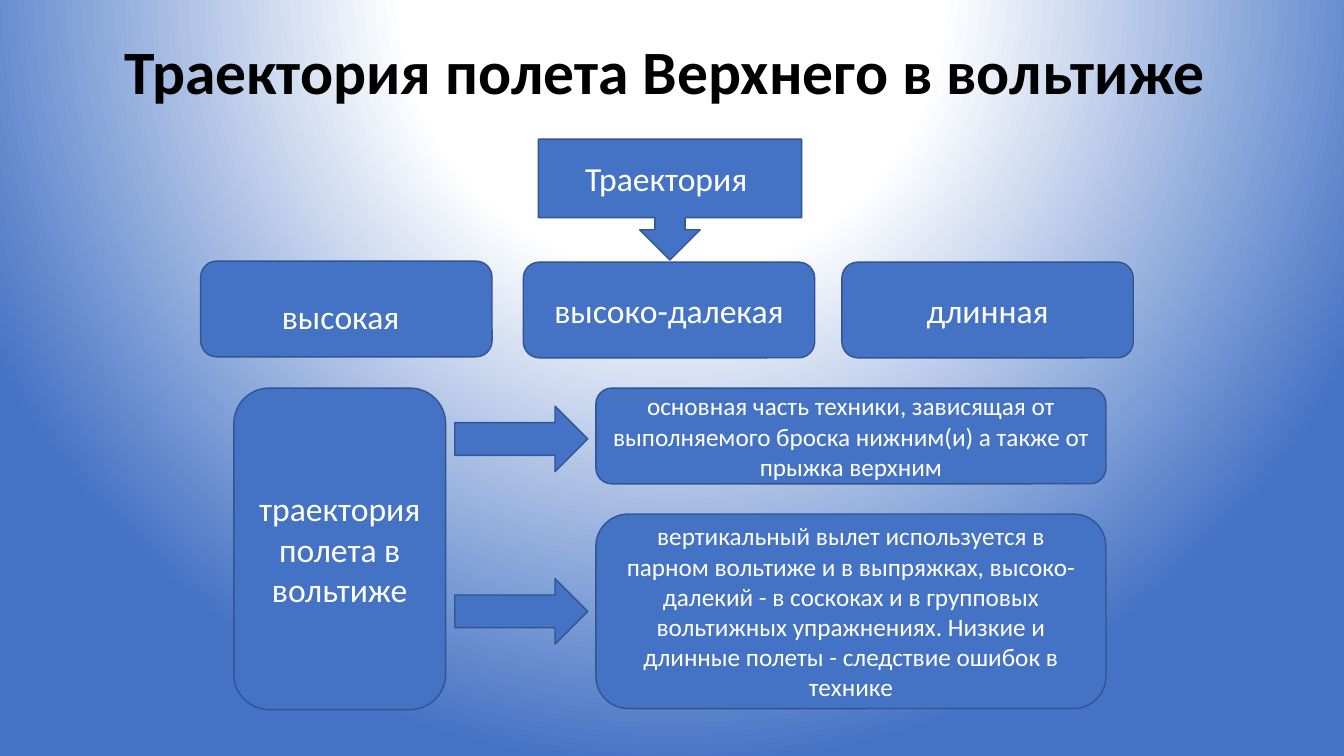
from dataclasses import dataclass

from pptx import Presentation
from pptx import util as u
from pptx.dml.color import RGBColor
from pptx.enum import shapes, text
from pptx.oxml import parse_xml
from pptx.oxml.ns import nsdecls

I = u.Inches
KIND = shapes.MSO_SHAPE


@dataclass(frozen=True)
class Theme:
    font: str = "Calibri"
    fill: str = "4472C4"
    line: str = "325491"
    light: str = "FFFFFF"
    dark: str = "000000"
    title: int = 44
    spacer: int = 36
    label: int = 24
    body: int = 18


T = Theme()


def paint_background(s):
    """Circular glow centred above the slide."""
    s.background.fill.solid()
    bg = s._element.xpath(".//p:bgPr")[0]
    stops = "".join(
        f'<a:gs pos="{pos * 1000}"><a:srgbClr val="{color}"/></a:gs>'
        for pos, color in ((0, T.light), (35, T.light), (100, T.fill)))
    bg.replace(bg[0], parse_xml(
        f'<a:gradFill {nsdecls("a")} rotWithShape="1"><a:gsLst>{stops}</a:gsLst>'
        '<a:path path="circle"><a:fillToRect l="50000" t="-80000" r="50000" b="180000"/>'
        '</a:path></a:gradFill>'))


def write(sp, runs, color, bold=False):
    """Centre one paragraph of (words, size) runs in a shape."""
    tf = sp.text_frame
    tf.word_wrap = True
    tf.vertical_anchor = text.MSO_ANCHOR.MIDDLE
    p = tf.paragraphs[0]
    p.alignment = text.PP_ALIGN.CENTER
    for words, size in runs:
        r = p.add_run()
        r.text = words
        r.font.name = T.font
        r.font.size = u.Pt(size)
        r.font.bold = bold
        r.font.color.rgb = RGBColor.from_string(color)
    return p


def add_block(s, kind, x, y, w, h, *runs):
    sp = s.shapes.add_shape(kind, I(x), I(y), I(w), I(h))
    sp.shadow.inherit = False
    sp.fill.solid()
    sp.fill.fore_color.rgb = RGBColor.from_string(T.fill)
    sp.line.color.rgb = RGBColor.from_string(T.line)
    sp.line.width = u.Pt(1)
    if runs:
        write(sp, runs, T.light)


def add_title(s, x, y, w, h):
    sp = s.shapes.add_textbox(I(x), I(y), I(w), I(h))
    p = write(sp, [("Траектория полета Верхнего в вольтиже ", T.title)], T.dark, True)
    p.line_spacing = 0.9


def add_kinds(s, x, y):
    """The callout and the three kinds of trajectory under it."""
    w, h = 2.89, 0.95
    add_block(s, KIND.DOWN_ARROW_CALLOUT, x + 3.35, y, 2.61, 1.2, ("Траектория ", T.label))
    kinds = (
        (0, 1.21, [("высокая", T.label), (" ", T.spacer)]),
        (3.2, 1.22, [("высоко-далекая", T.label)]),
        (6.36, 1.22, [("длинная", T.label)]),
    )
    for dx, dy, runs in kinds:
        add_block(s, KIND.ROUNDED_RECTANGLE, x + dx, y + dy, w, h, *runs)


def add_explanation(s, x, y, h):
    """The term on the left, with an arrow to each statement on the right."""
    add_block(s, KIND.ROUNDED_RECTANGLE, x, y, 2.1, h,
              ("траектория полета в вольтиже", T.label))
    statements = (
        (0, 0.95, 0.18, "основная часть техники, зависящая от выполняемого броска "
                        "нижним(и) а также от прыжка верхним"),
        (1.25, 1.93, 1.89, "вертикальный вылет используется в парном вольтиже и в выпряжках, "
                           "высоко-далекий - в соскоках и в групповых вольтижных упражнениях. "
                           "Низкие и длинные полеты - следствие ошибок в технике"),
    )
    for dy, height, arrow_dy, words in statements:
        add_block(s, KIND.ROUNDED_RECTANGLE, x + 3.59, y + dy, 5.06, height, (words, T.body))
        add_block(s, KIND.RIGHT_ARROW, x + 2.19, y + arrow_dy, 1.32, 0.65)


def main():
    prs = Presentation()
    prs.slide_width, prs.slide_height = I(13.33), I(7.5)
    s = prs.slides.add_slide(prs.slide_layouts[6])
    paint_background(s)
    add_title(s, 0.92, 0.01, 11.5, 1.45)
    add_kinds(s, 1.99, 1.38)
    add_explanation(s, 2.32, 3.85, 3.19)
    prs.save("out.pptx")


if __name__ == "__main__":
    main()
